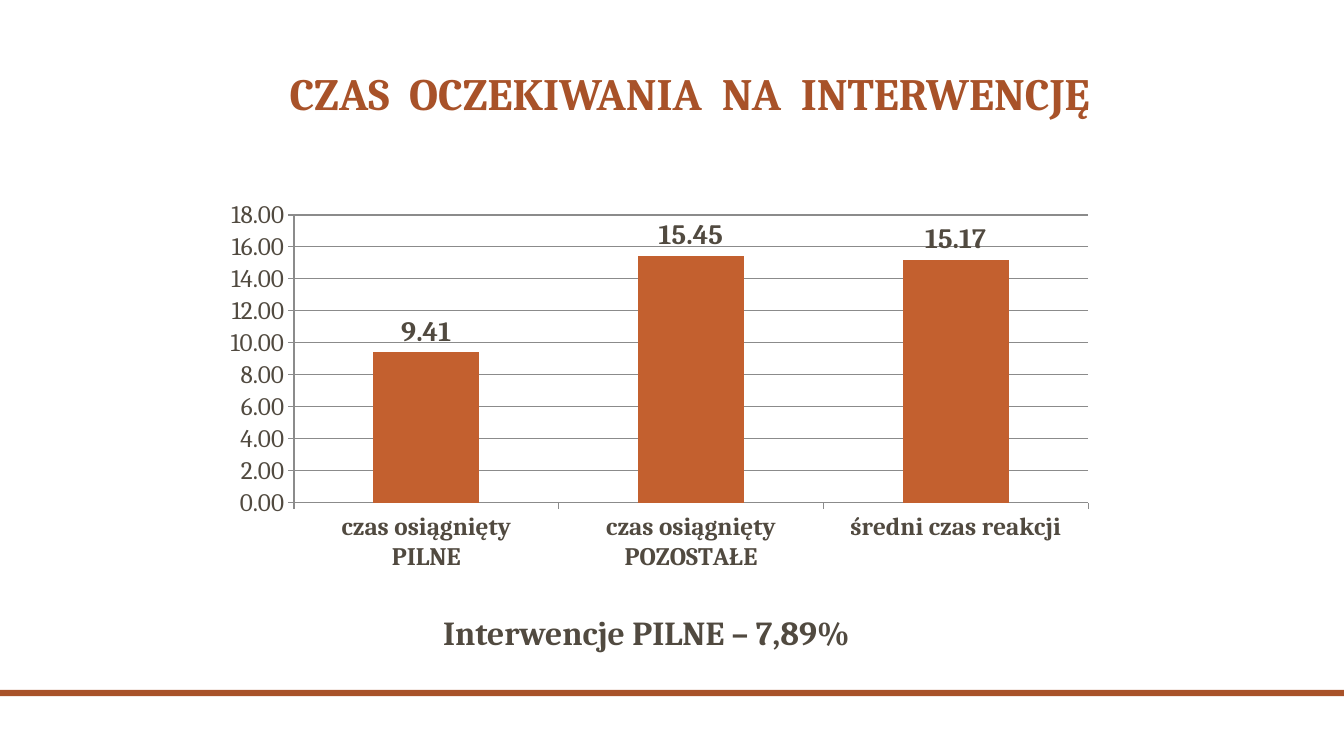
from dataclasses import dataclass

from lxml.etree import SubElement
from pptx import Presentation
from pptx.chart.data import CategoryChartData
from pptx.dml.color import RGBColor
from pptx.enum.chart import XL_CHART_TYPE, XL_LABEL_POSITION, XL_TICK_MARK
from pptx.enum.shapes import MSO_SHAPE
from pptx.enum.text import MSO_ANCHOR, PP_ALIGN
from pptx.oxml.ns import qn
from pptx.util import Emu, Pt


@dataclass(frozen=True)
class Theme:
    """Colours, typeface and type sizes of the slide."""
    font: str = "Cambria"
    rust: RGBColor = RGBColor(0xA8, 0x52, 0x29)
    column: RGBColor = RGBColor(0xC3, 0x60, 0x2F)
    ink: RGBColor = RGBColor(0x51, 0x4A, 0x40)
    grid: RGBColor = RGBColor(0x8B, 0x8B, 0x8B)
    title: int = 32
    note: int = 24
    value: int = 20
    axis: int = 18


THEME = Theme()
PX = 9525
SLIDE_WIDTH, SLIDE_HEIGHT = 1280, 720


def px(*lengths):
    """Turn pixel lengths into EMU."""
    return [Emu(length * PX) for length in lengths]


def style(font, size, color=THEME.ink, bold=False):
    """Apply the slide's typeface with a size, colour and weight."""
    font.name = THEME.font
    font.size = Pt(size)
    font.bold = bold
    font.color.rgb = color


def add_text(slide, box, text, size, color=THEME.ink, align=PP_ALIGN.LEFT,
             anchor=MSO_ANCHOR.TOP, inset=10, word_gap=0):
    """Write one bold paragraph, widening the gaps between words by word_gap points."""
    frame = slide.shapes.add_textbox(*px(*box)).text_frame
    frame.word_wrap = True
    frame.vertical_anchor = anchor
    frame.margin_left, frame.margin_right = px(inset, 10)
    paragraph = frame.paragraphs[0]
    paragraph.alignment = align
    paragraph.line_spacing = 0.9
    pieces = text.replace(" ", "| |").split("|") if word_gap else [text]
    for piece in pieces:
        run = paragraph.add_run()
        run.text = piece
        style(run.font, size, color, bold=True)
        if piece == " ":
            run.font._element.set("spc", str(word_gap * 100))


def set_plot_layout(chart, **fractions):
    """Fix the inner plot area as fractions of the chart."""
    plot_area = chart._chartSpace.chart.plotArea
    for old_layout in plot_area.findall(qn("c:layout")):
        plot_area.remove(old_layout)
    layout = SubElement(plot_area, qn("c:layout"))
    plot_area.insert(0, layout)
    manual = SubElement(layout, qn("c:manualLayout"))
    settings = {"layoutTarget": "inner", "xMode": "edge", "yMode": "edge", **fractions}
    for tag, setting in settings.items():
        SubElement(manual, qn(f"c:{tag}")).set("val", str(setting))


def add_waiting_times(slide, box):
    """Chart the waiting times by kind of intervention."""
    times = CategoryChartData(number_format="0.00")
    times.categories = ["czas osiągnięty\nPILNE", "czas osiągnięty\nPOZOSTAŁE",
                        "średni czas reakcji"]
    times.add_series("Series 1", [9.41, 15.45, 15.17])
    chart = slide.shapes.add_chart(XL_CHART_TYPE.COLUMN_CLUSTERED, *px(*box), times).chart
    chart.has_legend = False
    chart.has_title = False
    style(chart.font, THEME.axis)
    set_plot_layout(chart, x=0.085, y=0.058, w=0.893, h=0.729)

    kinds, minutes = chart.category_axis, chart.value_axis
    for axis in (kinds, minutes):
        axis.major_tick_mark = XL_TICK_MARK.OUTSIDE
        axis.format.line.color.rgb = THEME.grid
        axis.format.line.width = Pt(0.75)
        style(axis.tick_labels.font, THEME.axis, bold=axis is kinds)
    minutes.minimum_scale, minutes.maximum_scale, minutes.major_unit = 0, 18, 2
    minutes.major_gridlines.format.line.color.rgb = THEME.grid
    minutes.major_gridlines.format.line.width = Pt(0.75)
    minutes.tick_labels.number_format = "0.00"
    minutes.tick_labels.number_format_is_linked = False

    columns = chart.plots[0]
    columns.gap_width = 150
    columns.vary_by_categories = False
    fill = columns.series[0].format.fill
    fill.solid()
    fill.fore_color.rgb = THEME.column
    labels = columns.series[0].data_labels
    labels.show_value = True
    labels.number_format = "0.00"
    labels.number_format_is_linked = False
    labels.position = XL_LABEL_POSITION.OUTSIDE_END
    style(labels.font, THEME.value, bold=True)


def add_footer_rule(slide, box):
    """Draw the band across the foot of the slide."""
    rule = slide.shapes.add_shape(MSO_SHAPE.RECTANGLE, *px(*box))
    rule.shadow.inherit = False
    rule.fill.solid()
    rule.fill.fore_color.rgb = THEME.rust
    rule.line.fill.background()


def add_waiting_slide(slide, box):
    """Place the title, chart, note and rule within the given box."""
    left, top, width, _ = box
    add_footer_rule(slide, (left, top + 657, width, 6))
    add_waiting_times(slide, (left + 208, top + 183, 847, 376))
    add_text(slide, (left + 408, top + 582, 496, 68), "Interwencje PILNE – 7,89%",
             THEME.note, inset=14)
    add_text(slide, (left + 225, top + 38, 864, 106), "CZAS OCZEKIWANIA NA INTERWENCJĘ",
             THEME.title, THEME.rust, PP_ALIGN.CENTER, MSO_ANCHOR.MIDDLE, word_gap=7)


def main():
    """Build and save the presentation."""
    deck = Presentation()
    deck.slide_width, deck.slide_height = px(SLIDE_WIDTH, SLIDE_HEIGHT)
    slide = deck.slides.add_slide(deck.slide_layouts[6])
    add_waiting_slide(slide, (0, 0, SLIDE_WIDTH, SLIDE_HEIGHT))
    deck.save("out.pptx")


if __name__ == "__main__":
    main()
